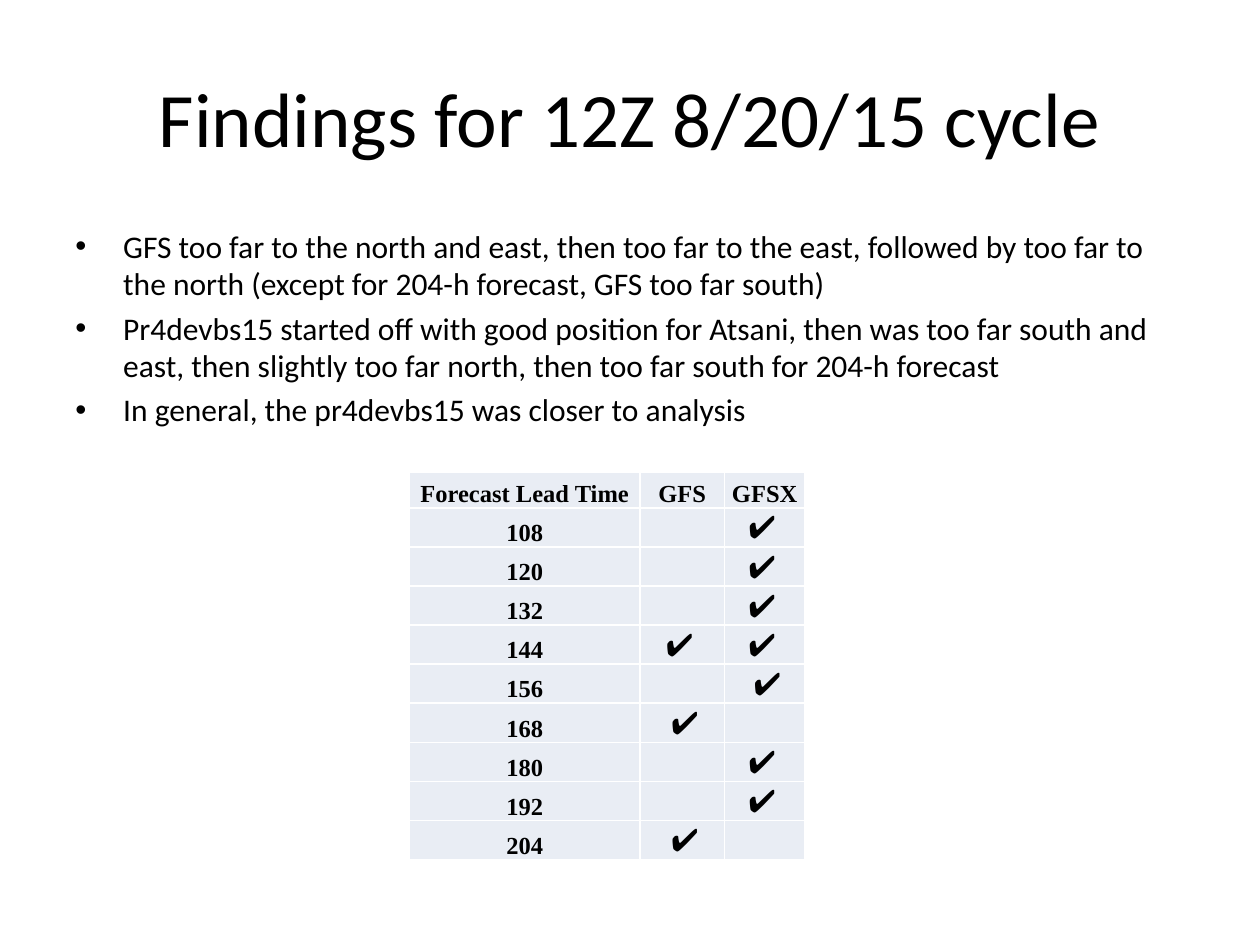
"""Build the slide of findings for the 12Z 8/20/15 forecast cycle."""
from dataclasses import dataclass

from lxml.etree import SubElement
from pptx import Presentation
from pptx.dml.color import RGBColor as Color
from pptx.enum.text import MSO_ANCHOR as Anchor, PP_ALIGN as Align
from pptx.oxml.ns import qn
from pptx.util import Inches, Pt


@dataclass(frozen=True)
class Theme:
    ink: Color = Color(0x00, 0x00, 0x00)
    pale: Color = Color(0xE9, 0xED, 0xF4)
    sans: str = "Calibri"
    serif: str = "Times New Roman"
    title: Pt = Pt(44)
    body: Pt = Pt(18)
    label: Pt = Pt(14)
    space: Pt = Pt(12)
    gap: Pt = Pt(3.6)


theme = Theme()


def style(font, name, size, bold=False):
    font.name, font.size, font.bold = name, size, bold
    font.color.rgb = theme.ink


deck = Presentation()
deck.slide_width, deck.slide_height = Inches(10), Inches(7.5)
slide = deck.slides.add_slide(deck.slide_layouts[5])

title = slide.shapes.title
title.left, title.top = Inches(0.5), Inches(0.3)
title.width, title.height = Inches(9), Inches(1.25)
title.text_frame.text = "Findings for 12Z 8/20/15 cycle"
title.text_frame.vertical_anchor = Anchor.MIDDLE
head = title.text_frame.paragraphs[0]
head.alignment = Align.CENTER
style(head.font, theme.sans, theme.title)

points = [
    "GFS too far to the north and east, then too far to the east, followed by "
    "too far to the north (except for 204-h forecast, GFS too far south)",
    "Pr4devbs15 started off with good position for Atsani, then was too far "
    "south and east, then slightly too far north, then too far south for 204-h forecast",
    "In general, the pr4devbs15 was closer to analysis",
]
box = slide.shapes.add_textbox(Inches(0.5), Inches(1.75), Inches(9), Inches(1.9))
frame = box.text_frame
frame.word_wrap = True
frame.text = "\n".join(points)
for para in frame.paragraphs:
    para.space_before = theme.gap
    style(para.font, theme.sans, theme.body)
    props = para._p.get_or_add_pPr()
    props.set("marL", str(Inches(0.38)))
    props.set("indent", str(-Inches(0.38)))
    bullet = SubElement(props, qn("a:buFont"))
    bullet.set("typeface", "Arial")
    props.insert_element_before(bullet, "a:defRPr")
    mark = SubElement(props, qn("a:buChar"))
    mark.set("char", "•")
    props.insert_element_before(mark, "a:defRPr")

left, right = "✔ ", " ✔"
rows = [
    ("Forecast Lead Time", "GFS", "GFSX"),
    ("108", "", left),
    ("120", "", left),
    ("132", "", left),
    ("144", left, left),
    ("156", "", right),
    ("168", right, ""),
    ("180", "", left),
    ("192", "", left),
    ("204", right, ""),
]
widths = [1.83, 0.67, 0.64]
grid = slide.shapes.add_table(
    len(rows), len(widths), Inches(3.25), Inches(3.75), Inches(3.14), Inches(3.07)
).table
grid.first_row = grid.horz_banding = False
for col, width in zip(grid.columns, widths):
    col.width = Inches(width)

for row, texts in zip(grid.rows, rows):
    row.height = Inches(0.28)
    for cell, text in zip(row.cells, texts):
        cell.fill.solid()
        cell.fill.fore_color.rgb = theme.pale
        cell.margin_left = cell.margin_right = cell.margin_top = Inches(0.01)
        cell.margin_bottom = 0
        cell.vertical_anchor = Anchor.BOTTOM
        para = cell.text_frame.paragraphs[0]
        para.alignment = Align.CENTER
        if text in (left, right):
            for char in text:
                run = para.add_run()
                run.text = char
                if char == "✔":
                    style(run.font, theme.sans, theme.body)
                else:
                    style(run.font, theme.serif, theme.space, True)
        else:
            para.text = text
            style(para.font, theme.serif, theme.label, True)

deck.save("out.pptx")
